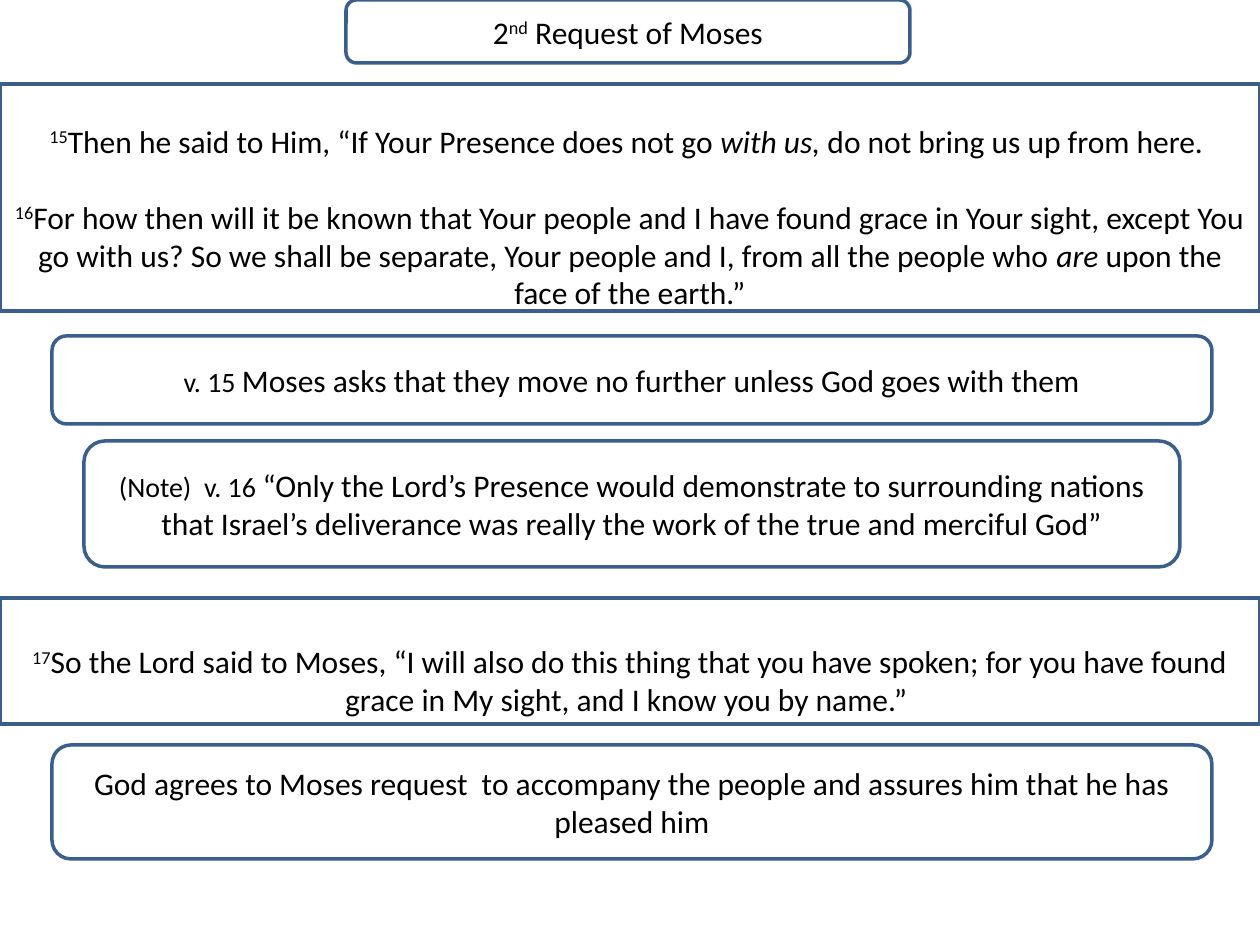
import pptx
import pptx.util
import pptx.dml.color
import pptx.enum.shapes
import pptx.enum.text

PX = 914400 // 126
SHAPES = pptx.enum.shapes.MSO_SHAPE
LINE_HEIGHT = 38


def color(value):
    return pptx.dml.color.RGBColor.from_string(value)


deck = pptx.Presentation()
deck.slide_width = pptx.util.Inches(10)
deck.slide_height = pptx.util.Inches(7.5)
page = deck.slides.add_slide(deck.slide_layouts[6])

# Each verse or comment is a list of (text, style) spans.
title = [("2", ""), ("nd", "super"), (" Request of Moses", "")]
verse_15 = [
    ("15", "super"),
    ("Then he said to Him, “If Your Presence does not go ", ""),
    ("with us,", "italic"),
    (" do not bring us up from here. ", ""),
]
verse_16 = [
    ("16", "super"),
    ("For how then will it be known that Your people and I have found grace "
     "in Your sight, except You go with us? So we shall be separate, Your "
     "people and I, from all the people who ", ""),
    ("are", "italic"),
    (" upon the face of the earth.”", ""),
]
verse_17 = [
    ("17", "super"),
    ("So the Lord said to Moses, “I will also do this thing that you have "
     "spoken; for you have found grace in My sight, and I know you by name.” ", ""),
]
comment_15 = [
    ("v. 15 ", "small"),
    ("Moses asks that they move no further unless God goes with them", ""),
]
comment_16 = [
    ("(Note)  v. 16 ", "small"),
    ("“Only the Lord’s Presence would demonstrate to surrounding nations that "
     "Israel’s deliverance was really the work of the true and merciful God”", ""),
]
comment_17 = [
    ("God agrees to Moses request  to accompany the people and assures him "
     "that he has pleased him", ""),
]

# Scripture is in full-width rectangles, headings and comments in rounded ones.
boxes = [
    (SHAPES.RECTANGLE, (0, 84, 1260, 227), [verse_15, verse_16]),
    (SHAPES.ROUNDED_RECTANGLE, (346, 0, 564, 63), [title]),
    (SHAPES.RECTANGLE, (0, 598, 1260, 126), [verse_17]),
    (SHAPES.ROUNDED_RECTANGLE, (52, 336, 1160, 88), [comment_15]),
    (SHAPES.ROUNDED_RECTANGLE, (52, 745, 1160, 114), [comment_17]),
    (SHAPES.ROUNDED_RECTANGLE, (84, 441, 1096, 126), [comment_16]),
]

for kind, place, paras in boxes:
    box = page.shapes.add_shape(kind, *(length * PX for length in place))
    box.shadow.inherit = False
    box.fill.solid()
    box.fill.fore_color.rgb = color("FFFFFF")
    box.line.color.rgb = color("3A5F8C")
    box.line.width = pptx.util.Pt(2)

    frame = box.text_frame
    frame.word_wrap = True
    frame.vertical_anchor = pptx.enum.text.MSO_ANCHOR.MIDDLE
    if kind == SHAPES.RECTANGLE:
        frame.margin_top = LINE_HEIGHT * PX
        frame.margin_bottom = 0

    for index, spans in enumerate(paras):
        para = frame.add_paragraph() if index else frame.paragraphs[0]
        para.alignment = pptx.enum.text.PP_ALIGN.CENTER
        para.font.name = "Calibri"
        para.font.size = pptx.util.Pt(18)
        para.font.color.rgb = color("000000")
        if index:
            para.space_before = pptx.util.Pt(22)
        for text, style in spans:
            span = para.add_run()
            span.text = text
            if style == "italic":
                span.font.italic = True
            elif style == "small":
                span.font.size = pptx.util.Pt(16)
            elif style == "super":
                span.font._element.set("baseline", "30000")

deck.save("out.pptx")
